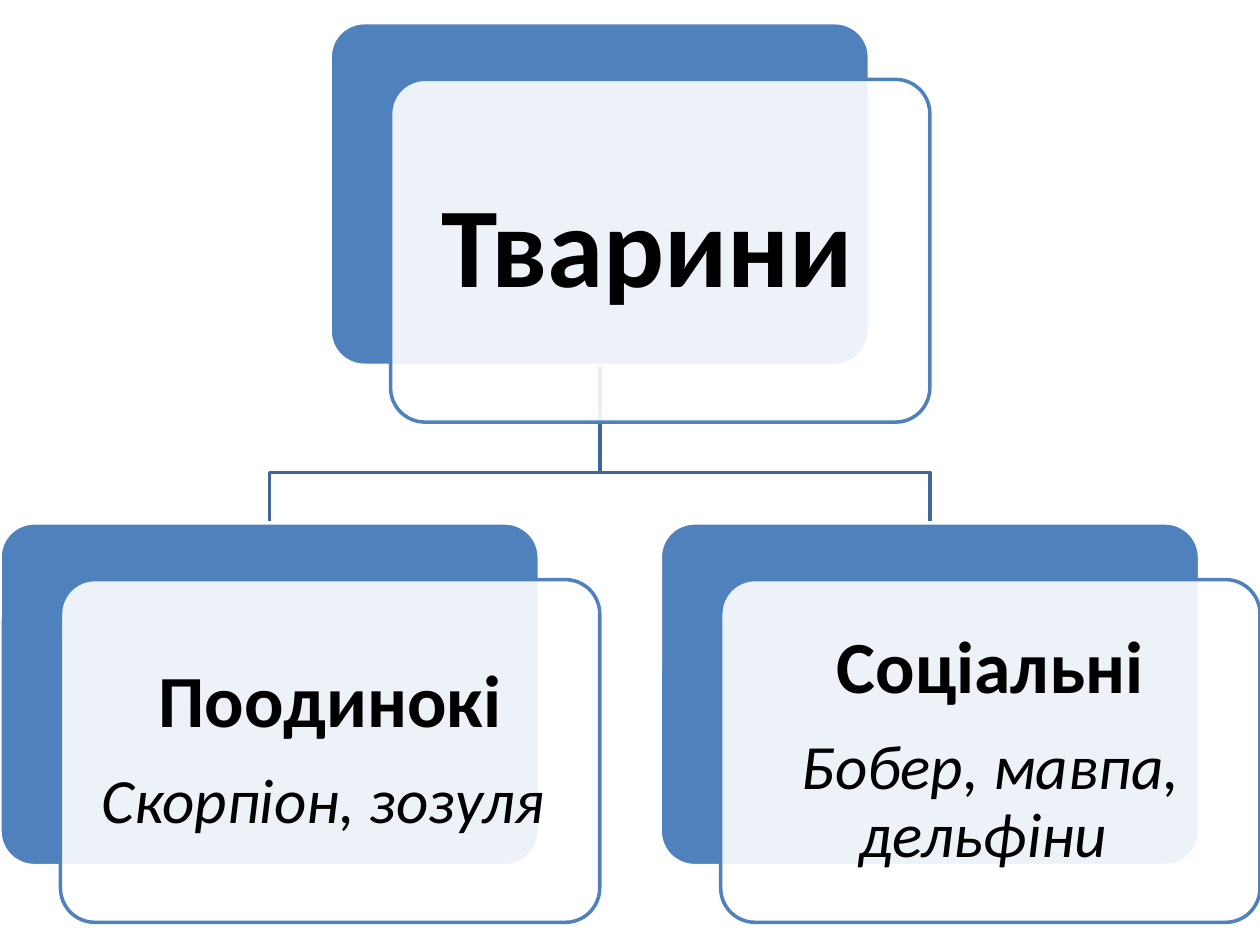
from lxml import etree
from pptx import Presentation
from pptx.dml.color import RGBColor
from pptx.enum import shapes, text
from pptx.oxml.ns import qn
from pptx.util import Inches, Pt

COLORS = {"card": "4F81BD", "link": "3F6797", "paper": "FFFFFF", "ink": "000000"}
HEAD = {"size": Pt(42), "bold": True, "italic": False}
LIST = {"size": Pt(36), "bold": False, "italic": True}
TITLE = {"size": Pt(65), "bold": True, "italic": False}

# left, top, text margin, paragraphs; the first node is the parent
NODES = [
    (2.62, 0.18, 0.27, [("Тварини ", TITLE)]),
    (0, 4.15, 0.17, [("Поодинокі", HEAD), ("Скорпіон, зозуля ", LIST)]),
    (5.24, 4.15, 0.17, [("Соціальні", HEAD), ("Бобер, мавпа, дельфіни ", LIST)]),
]
WIDE, HIGH = 4.28, 2.72
SHIFT_X, SHIFT_Y = 0.48, 0.45
INSET = 0.08
BEND = 3.75

deck = Presentation()
deck.slide_width, deck.slide_height = Inches(10), Inches(7.5)
slide = deck.slides.add_slide(deck.slide_layouts[6])


def color(name):
    return RGBColor.from_string(COLORS[name])


def outline(shape, name):
    shape.shadow.inherit = False
    shape.line.color.rgb = color(name)
    shape.line.width = Pt(2)


def link(parent, child):
    """Draw the elbow line from the parent's base to the child's top."""
    start, end = parent[0] + WIDE / 2, child[0] + WIDE / 2
    base, top = parent[1] + HIGH, child[1]
    points = [(start, BEND), (end, BEND), (end, top)]
    path = slide.shapes.build_freeform(Inches(start), Inches(base))
    path.add_line_segments([(Inches(x), Inches(y)) for x, y in points], close=False)
    shape = path.convert_to_shape()
    shape.fill.background()
    outline(shape, "link")


def card(left, top, fill, line, alpha=None):
    shape = slide.shapes.add_shape(
        shapes.MSO_SHAPE.ROUNDED_RECTANGLE,
        Inches(left), Inches(top), Inches(WIDE), Inches(HIGH))
    shape.adjustments[0] = 0.1
    shape.fill.solid()
    shape.fill.fore_color.rgb = color(fill)
    outline(shape, line)
    if alpha:
        tint = shape.fill._xPr.find(qn("a:solidFill"))[0]
        etree.SubElement(tint, qn("a:alpha")).set("val", str(alpha * 1000))


def label(left, top, margin, lines):
    box = slide.shapes.add_textbox(
        Inches(left + INSET), Inches(top + INSET),
        Inches(WIDE - 2 * INSET), Inches(HIGH - 2 * INSET))
    frame = box.text_frame
    frame.word_wrap = True
    frame.vertical_anchor = text.MSO_ANCHOR.MIDDLE
    for side in ("left", "right", "top", "bottom"):
        setattr(frame, f"margin_{side}", Inches(margin))
    for i, (words, style) in enumerate(lines):
        para = frame.add_paragraph() if i else frame.paragraphs[0]
        para.alignment = text.PP_ALIGN.CENTER
        para.line_spacing = 0.9
        para.space_after = Pt(0.35 * style["size"].pt)
        run = para.add_run()
        run.text = words
        run.font.name = "Calibri"
        run.font.color.rgb = color("ink")
        for key, value in style.items():
            setattr(run.font, key, value)


for child in reversed(NODES[1:]):
    link(NODES[0], child)
for left, top, margin, lines in NODES:
    card(left, top, "card", "paper")
    front = left + SHIFT_X, top + SHIFT_Y
    card(*front, "paper", "card", alpha=90)
    label(*front, margin, lines)

deck.save("out.pptx")
